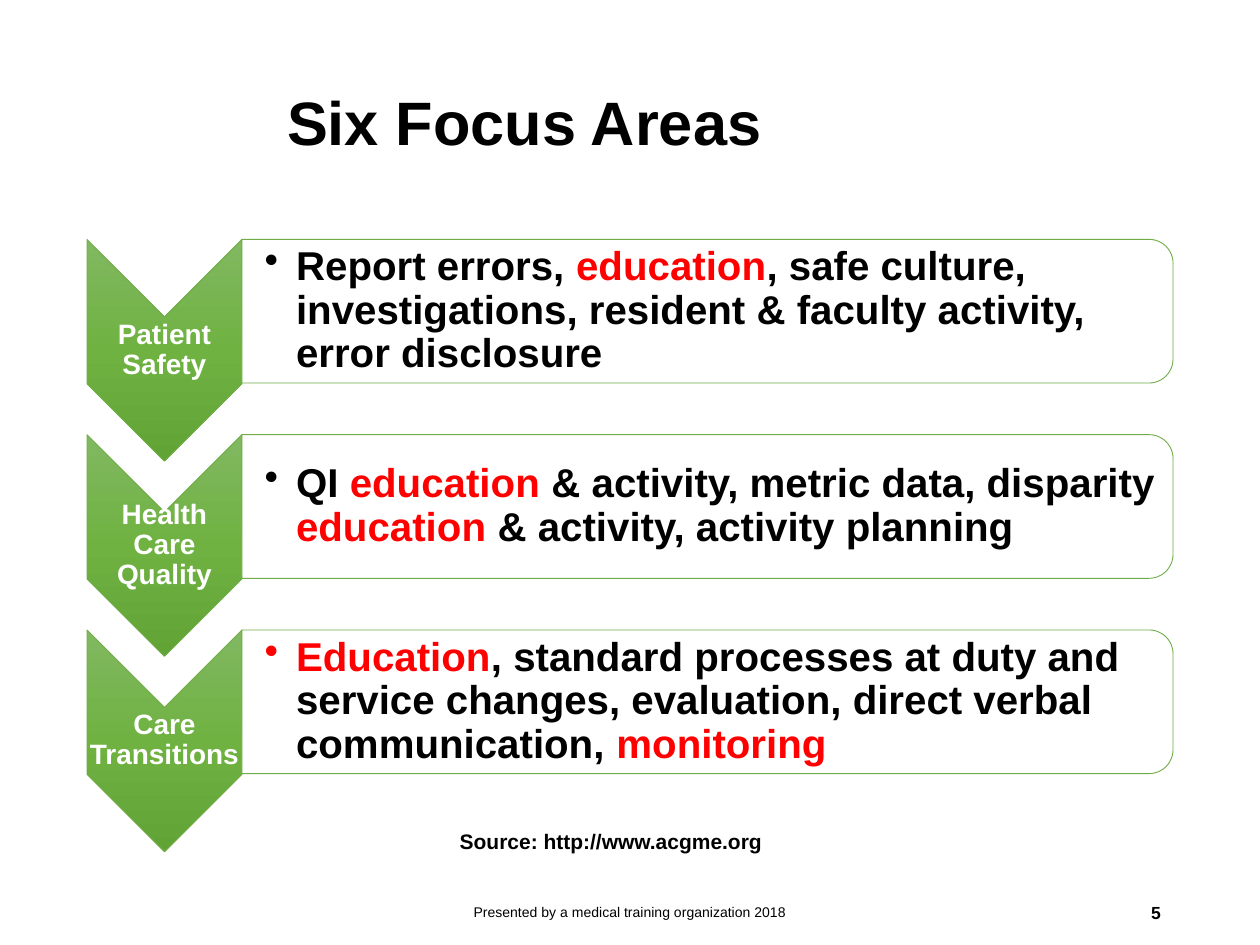
from dataclasses import dataclass

from lxml import etree
from pptx import Presentation
from pptx import util as u
from pptx.dml.color import RGBColor
from pptx.enum import shapes, text
from pptx.oxml import ns


@dataclass(frozen=True)
class Theme:
    font: str = "Arial"
    black: str = "000000"
    white: str = "FFFFFF"
    accent: str = "FF0000"
    outline: str = "70AD47"
    gradient: tuple = ((0, "81B861"), (50, "6FB242"), (100, "62A336"))
    panel_opacity: int = 90
    title_size: int = 35
    body_size: int = 23
    label_size: int = 16
    source_size: int = 12
    number_size: int = 10
    footer_size: int = 8


THEME = Theme()

# Rows of the list: label, then runs as (text, is highlighted)
FOCUS_AREAS = [
    ("Patient Safety", [
        ("Report errors, ", False), ("education", True),
        (", safe culture, investigations, resident & faculty activity, error disclosure", False)]),
    ("Health Care Quality", [
        ("QI ", False), ("education", True),
        (" & activity, metric data, disparity ", False), ("education", True),
        (" & activity, activity planning", False)]),
    ("Care Transitions", [
        ("Education", True),
        (", standard processes at duty and service changes, evaluation, direct verbal communication, ", False),
        ("monitoring", True)]),
]
FIRST_TOP = 1.9
ROW_STEP = 1.55
CHEVRON_LEFT, CHEVRON_WIDTH, CHEVRON_HEIGHT = 0.69, 1.23, 1.76
PANEL_LEFT, PANEL_WIDTH, PANEL_HEIGHT = 1.92, 7.39, 1.14


def add_child(parent, tag, **attributes):
    child = etree.SubElement(parent, ns.qn(tag))
    for name, value in attributes.items():
        child.set(name, str(value))
    return child


def add_text(slide, content, left, top, width, height, *, size, color=THEME.black,
             bold=False, align=text.PP_ALIGN.LEFT, anchor=text.MSO_ANCHOR.MIDDLE,
             insets=(0.1, 0.05, 0.1, 0.05), line_spacing=None, bullet=False):
    """Add a one-paragraph text box; content is a string or (text, highlighted) runs."""
    box = slide.shapes.add_textbox(*map(u.Inches, (left, top, width, height)))
    frame = box.text_frame
    frame.word_wrap = True
    frame.vertical_anchor = anchor
    (frame.margin_left, frame.margin_top,
     frame.margin_right, frame.margin_bottom) = map(u.Inches, insets)
    paragraph = frame.paragraphs[0]
    if bullet:
        properties = paragraph._p.get_or_add_pPr()
        properties.set("marL", str(u.Inches(0.25)))
        properties.set("indent", str(-u.Inches(0.25)))
        add_child(properties, "a:buChar", char="•")
    paragraph.alignment = align
    if line_spacing:
        paragraph.line_spacing = line_spacing
    runs = [(content, False)] if isinstance(content, str) else content
    for words, highlighted in runs:
        run = paragraph.add_run()
        run.text = words
        run.font.name = THEME.font
        run.font.size = u.Pt(size)
        run.font.bold = bold
        run.font.color.rgb = RGBColor.from_string(THEME.accent if highlighted else color)
    return box


def add_rotated_shape(slide, kind, left, top, width, height):
    """Add a shape turned by 90 degrees that covers the given visible area."""
    shift = (width - height) / 2
    shape = slide.shapes.add_shape(
        kind, *map(u.Inches, (left + shift, top - shift, height, width)))
    shape.rotation = 90
    shape.shadow.inherit = False
    shape.fill.solid()
    shape.fill.fore_color.rgb = RGBColor.from_string(THEME.white)
    shape.line.color.rgb = RGBColor.from_string(THEME.outline)
    shape.line.width = u.Pt(0.5)
    return shape


def add_chevron(slide, top, label):
    shape = add_rotated_shape(slide, shapes.MSO_SHAPE.CHEVRON, CHEVRON_LEFT, top,
                              CHEVRON_WIDTH, CHEVRON_HEIGHT)
    # Vertical gradient that does not turn with the shape
    solid = shape._element.spPr.find(ns.qn("a:solidFill"))
    gradient = etree.Element(ns.qn("a:gradFill"), rotWithShape="0")
    stops = add_child(gradient, "a:gsLst")
    for position, color in THEME.gradient:
        stop = add_child(stops, "a:gs", pos=position * 1000)
        add_child(stop, "a:srgbClr", val=color)
    add_child(gradient, "a:lin", ang=90 * 60000, scaled=0)
    solid.getparent().replace(solid, gradient)

    height = 0.53
    add_text(slide, label, CHEVRON_LEFT, top + (CHEVRON_HEIGHT - height) / 2,
             CHEVRON_WIDTH, height, size=THEME.label_size, color=THEME.white, bold=True,
             align=text.PP_ALIGN.CENTER, insets=(0.01,) * 4, line_spacing=0.9)


def add_panel(slide, top, runs):
    shape = add_rotated_shape(slide, shapes.MSO_SHAPE.ROUND_2_SAME_RECTANGLE, PANEL_LEFT, top,
                              PANEL_WIDTH, PANEL_HEIGHT)
    color = shape._element.spPr.find(ns.qn("a:solidFill"))[0]
    add_child(color, "a:alpha", val=THEME.panel_opacity * 1000)

    margin = 0.06
    add_text(slide, runs, PANEL_LEFT, top + margin, PANEL_WIDTH - margin,
             PANEL_HEIGHT - 2 * margin, size=THEME.body_size, bold=True,
             insets=(0.18, 0.02, 0.02, 0.02), line_spacing=0.9, bullet=True)


def main():
    presentation = Presentation()
    presentation.slide_width = u.Inches(10)
    presentation.slide_height = u.Inches(7.5)
    slide = presentation.slides.add_slide(presentation.slide_layouts[6])

    # Title
    add_text(slide, "Six Focus Areas", 2.18, 0.27, 7.14, 1.45,
             size=THEME.title_size, bold=True, line_spacing=0.9)

    # Chevron list
    for row, (label, runs) in enumerate(FOCUS_AREAS):
        top = FIRST_TOP + row * ROW_STEP
        add_chevron(slide, top, label)
        add_panel(slide, top, runs)

    # Source and footer
    add_text(slide, "Source: http://www.acgme.org", 3.55, 6.53, 2.75, 0.3,
             size=THEME.source_size, bold=True, anchor=text.MSO_ANCHOR.TOP)
    add_text(slide, "Presented by a medical training organization 2018", 3.31, 7.04, 3.38, 0.4,
             size=THEME.footer_size, align=text.PP_ALIGN.CENTER)
    add_text(slide, "5", 7.06, 7.04, 2.25, 0.4,
             size=THEME.number_size, bold=True, align=text.PP_ALIGN.RIGHT)

    presentation.save("out.pptx")


if __name__ == "__main__":
    main()
